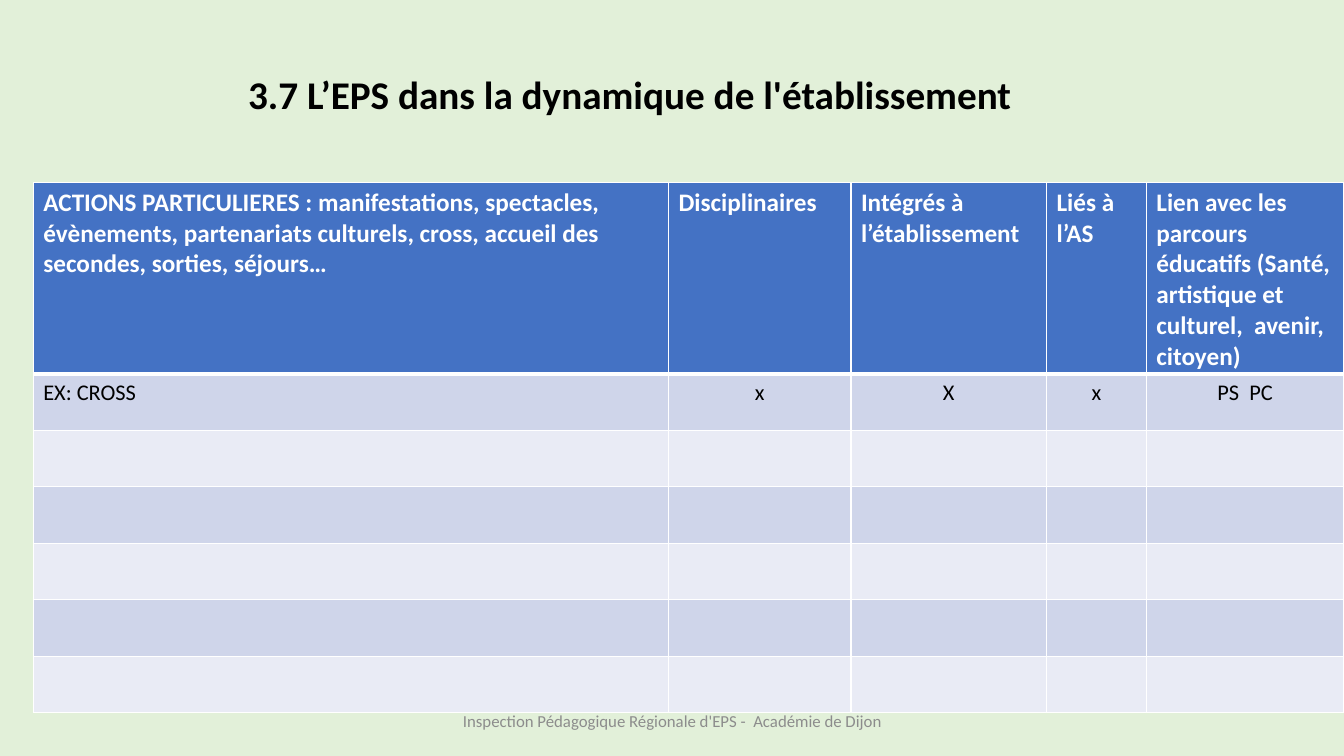
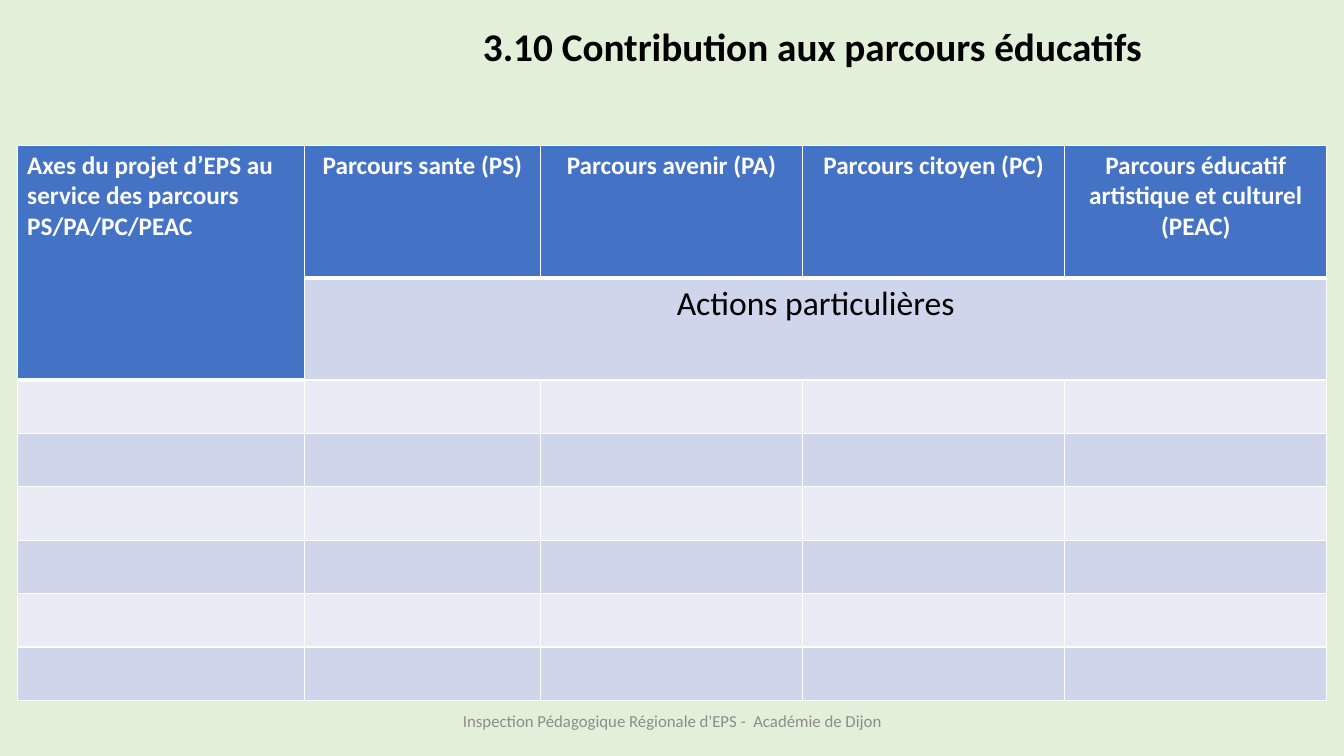
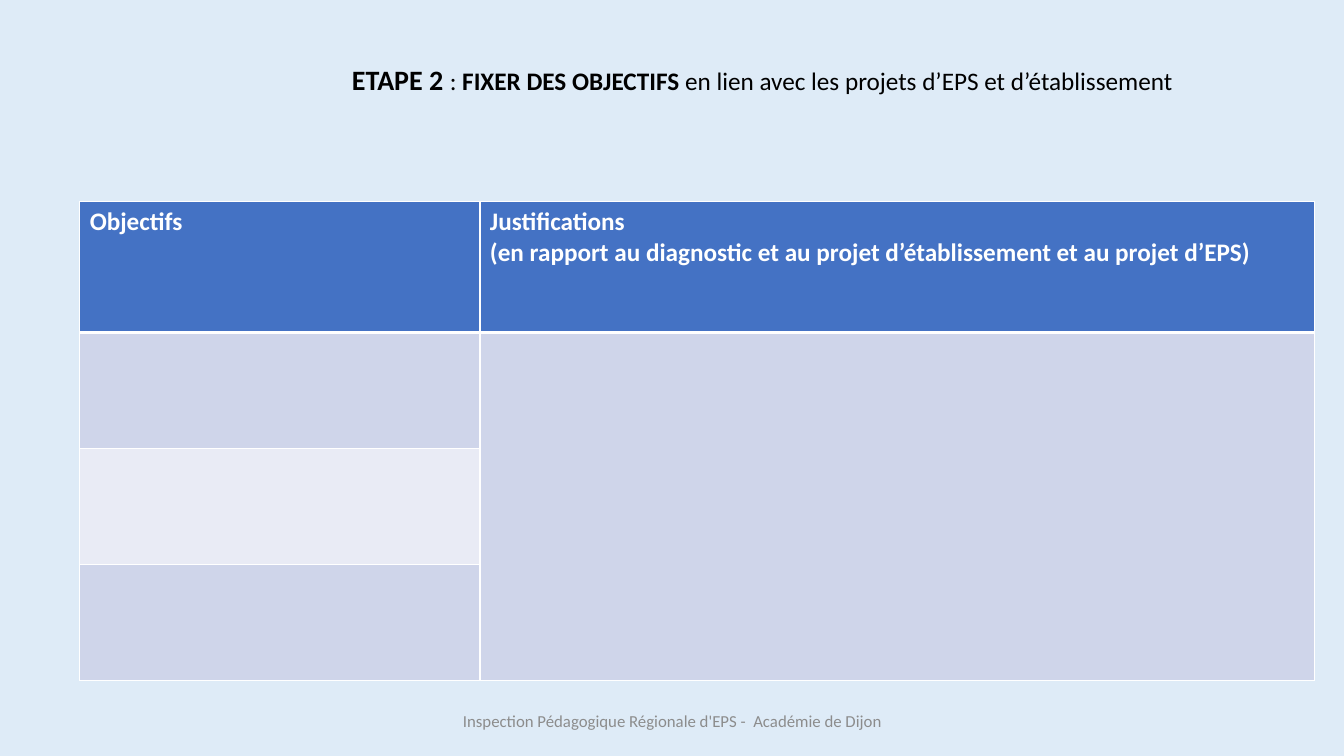
from lxml.etree import SubElement
from pptx import Presentation
from pptx.dml.color import RGBColor
from pptx.enum.text import MSO_ANCHOR, MSO_AUTO_SIZE, PP_ALIGN
from pptx.oxml.ns import qn
from pptx.util import Inches, Pt

FONT = "Calibri"
GREEN, BLUE = "E2F0D9", "DEEBF7"
BLACK, WHITE, GREY = "000000", "FFFFFF", "8C8C8C"
HEADER, BANDS = "4472C4", ("E9EBF5", "CFD5EA")
FOOTER = "Inspection Pédagogique Régionale d'EPS -  Académie de Dijon"
FOOTER_BOX = (4.42, 6.95, 4.5, 0.4)


def color(value):
    return RGBColor.from_string(value)


def add_span(para, text, size, shade, bold=False):
    span = para.add_run()
    span.text = text
    span.font.name = FONT
    span.font.size = Pt(size)
    span.font.bold = bold
    span.font.color.rgb = color(shade)


def place(shape, box):
    shape.left, shape.top, shape.width, shape.height = map(Inches, box)


def add_title(page, box, spans, wrap=True):
    title = page.shapes.title
    place(title, box)
    frame = title.text_frame
    frame.word_wrap = wrap
    frame.auto_size = MSO_AUTO_SIZE.NONE
    frame.vertical_anchor = MSO_ANCHOR.TOP
    para = frame.paragraphs[0]
    para.alignment = PP_ALIGN.LEFT
    for text, size, bold in spans:
        add_span(para, text, size, BLACK, bold)


def add_footer(page):
    frame = page.shapes.add_textbox(*map(Inches, FOOTER_BOX)).text_frame
    frame.word_wrap = True
    frame.vertical_anchor = MSO_ANCHOR.MIDDLE
    para = frame.paragraphs[0]
    para.alignment = PP_ALIGN.CENTER
    add_span(para, FOOTER, 12, GREY)


def add_page(deck, background):
    page = deck.slides.add_slide(deck.slide_layouts[5])
    for holder in list(page.placeholders):
        if holder != page.shapes.title:
            holder.element.getparent().remove(holder.element)
    fill = page.background.fill
    fill.solid()
    fill.fore_color.rgb = color(background)
    add_footer(page)
    return page


def style_cell(cell, shade, bottom=1):
    properties = cell._tc.get_or_add_tcPr()
    for side, width in (("L", 1), ("R", 1), ("T", 1), ("B", bottom)):
        line = SubElement(properties, qn("a:ln" + side), w=str(Pt(width)))
        fill = SubElement(line, qn("a:solidFill"))
        SubElement(fill, qn("a:srgbClr"), val=WHITE)
    cell.fill.solid()
    cell.fill.fore_color.rgb = color(shade)


def write_cell(cell, lines, size, shade, bold=False, align=PP_ALIGN.LEFT):
    frame = cell.text_frame
    for index, line in enumerate(lines):
        para = frame.add_paragraph() if index else frame.paragraphs[0]
        para.alignment = align
        add_span(para, line, size, shade, bold)


def add_grid(page, corner, columns, rows, headers, aligns, merges=()):
    box = (*corner, sum(columns), sum(rows))
    frame = page.shapes.add_table(len(rows), len(columns), *map(Inches, box))
    grid = frame.table
    grid.first_row = grid.horz_banding = False
    for column, width in zip(grid.columns, columns):
        column.width = Inches(width)
    for row, height in zip(grid.rows, rows):
        row.height = Inches(height)
    header_cells = {(0, column) for column in range(len(columns))}
    for first, last in merges:
        grid.cell(*first).merge(grid.cell(*last))
        if first in header_cells:
            header_cells.add(last)
    for row in range(len(rows)):
        for column in range(len(columns)):
            heading = (row, column) in header_cells
            shade = HEADER if heading else BANDS[row % 2]
            style_cell(grid.cell(row, column), shade, 3 if heading else 1)
    for column, (lines, align) in enumerate(zip(headers, aligns)):
        write_cell(grid.cell(0, column), lines, 18, WHITE, True, align)
    return grid


def add_actions_page(deck):
    page = add_page(deck, GREEN)
    title = "3.7 L’EPS dans la dynamique de l'établissement"
    add_title(page, (2.36, 0.65, 10.87, 1.04), [(title, 28, True)])
    headers = [
        ["ACTIONS PARTICULIERES : manifestations, spectacles, évènements, "
         "partenariats culturels, cross, accueil des secondes, sorties, séjours…"],
        ["Disciplinaires"],
        ["Intégrés à l’établissement"],
        ["Liés à l’AS"],
        ["Lien avec les parcours éducatifs (Santé, artistique et culturel,  avenir, citoyen)"],
    ]
    grid = add_grid(page, (0.33, 1.81), [6.3, 1.81, 1.94, 0.99, 1.96],
                    [1.89] + [0.56] * 6, headers, [PP_ALIGN.LEFT] * 5)
    for column, text in enumerate(["EX: CROSS", "x", "X", "x", "PS  PC"]):
        align = PP_ALIGN.CENTER if column else PP_ALIGN.LEFT
        write_cell(grid.cell(1, column), [text], 16, BLACK, align=align)


def add_pathways_page(deck):
    page = add_page(deck, GREEN)
    title = "3.10 Contribution aux parcours éducatifs"
    add_title(page, (4.69, 0.17, 8.47, 0.88), [(title, 28, True)])
    headers = [
        ["Axes du projet d’EPS au service des parcours PS/PA/PC/PEAC"],
        ["Parcours sante (PS)"],
        ["Parcours avenir (PA)"],
        ["Parcours citoyen (PC)"],
        ["Parcours éducatif artistique et culturel (PEAC)"],
    ]
    grid = add_grid(page, (0.17, 1.44), [2.85, 2.34] + [2.6] * 3,
                    [1.32, 1.01] + [0.53] * 6, headers,
                    [PP_ALIGN.LEFT] + [PP_ALIGN.CENTER] * 4,
                    [((0, 0), (1, 0)), ((1, 1), (1, 4))])
    write_cell(grid.cell(1, 1), ["Actions particulières"], 24, BLACK,
               align=PP_ALIGN.CENTER)


def add_objectives_page(deck):
    page = add_page(deck, BLUE)
    spans = [
        ("ETAPE 2 ", 20, True),
        (": ", 18, False),
        ("FIXER DES OBJECTIFS ", 18, True),
        ("en lien avec les projets d’EPS et d’établissement", 18, False),
    ]
    add_title(page, (3.39, 0.57, 8.37, 0.44), spans, wrap=False)
    headers = [
        ["Objectifs"],
        ["Justifications",
         "(en rapport au diagnostic et au projet d’établissement et au projet d’EPS)"],
    ]
    add_grid(page, (0.79, 2), [3.97, 8.28], [1.3] + [1.15] * 3, headers,
             [PP_ALIGN.LEFT] * 2, [((1, 1), (3, 1))])


def main():
    deck = Presentation()
    deck.slide_width, deck.slide_height = Inches(13.33), Inches(7.5)
    add_actions_page(deck)
    add_pathways_page(deck)
    add_objectives_page(deck)
    deck.save("out.pptx")


if __name__ == "__main__":
    main()
